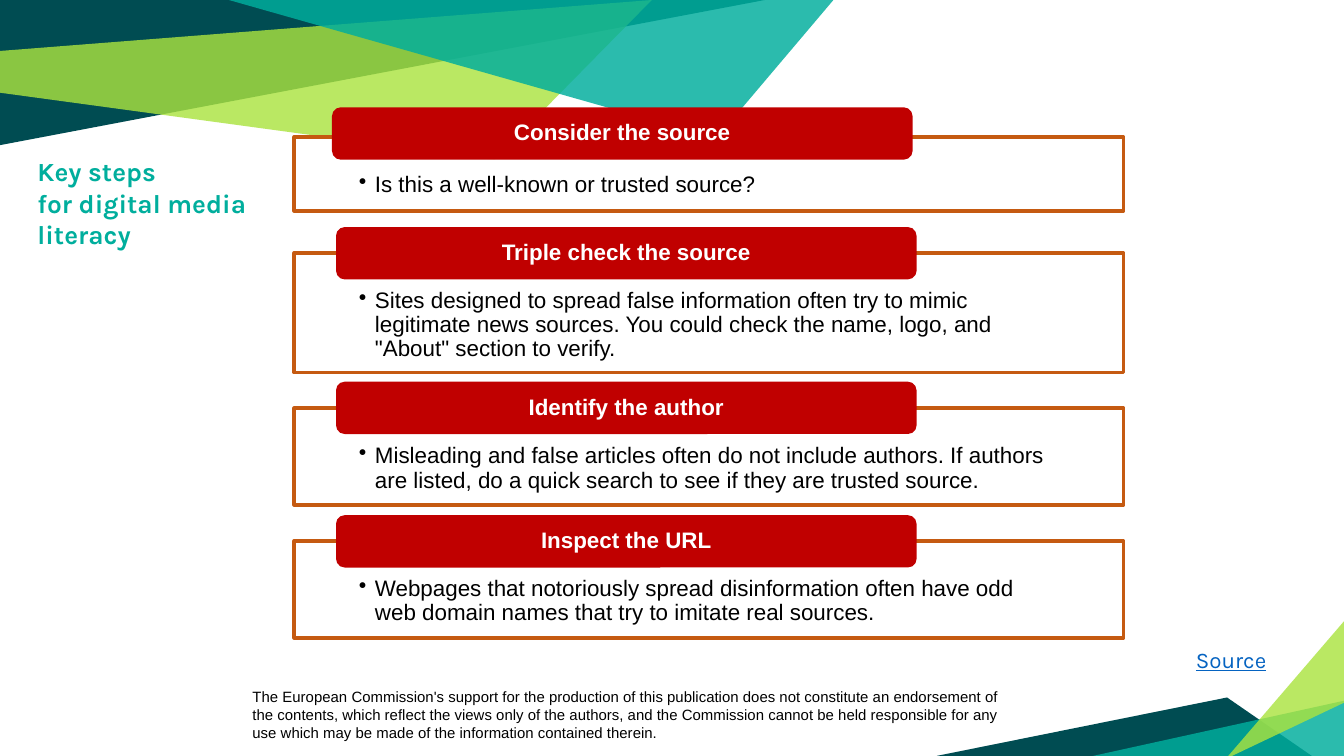
from lxml.etree import SubElement
from pptx import Presentation
from pptx.dml.color import RGBColor
from pptx.enum.shapes import MSO_SHAPE
from pptx.enum.text import MSO_ANCHOR, MSO_AUTO_SIZE, PP_ALIGN
from pptx.oxml.ns import qn
from pptx.util import Inches, Pt

WIDE, HIGH = Inches(10), Inches(5.625)
INK = {"dark": "004C52", "lime": "ABE33F", "teal": "00AE9D", "red": "C00000",
       "rust": "C55A11", "white": "FFFFFF", "black": "000000", "blue": "0563C1"}

NOTE = ("The European Commission's support for the production of this publication "
        "does not constitute an endorsement of the contents, which reflect the views "
        "only of the authors, and the Commission cannot be held responsible for any "
        "use which may be made of the information contained therein.")
TITLE = ["Key steps", "for digital media literacy"]

SHARDS = [
    ("dark", 100, [(0, 0), (0, 19.2), (56.9, 0)]),
    ("lime", 81, [(-0.1, 6.76), (0, 12.27), (36.8, 21.16), (48.5, 0)]),
    ("dark", 100, [(69.7, 100), (97.6, 100), (91.3, 92.27)]),
    ("teal", 83, [(100.2, 92.62), (100.2, 100.4), (80.3, 100.4)]),
    ("lime", 81, [(100.2, 92.8), (100.2, 81.78), (91.2, 100.4)]),
    ("teal", 83, [(17, 0), (53.3, 18.31), (62.1, -0.18), (60.9, 0)]),
]

STEPS = [
    ("Consider the source", "Is this a well-known or trusted source?",
     24.7, 14.2, 18.13, 9.78),
    ("Triple check the source",
     "Sites designed to spread false information often try to mimic legitimate news "
     "sources. You could check the name, logo, and \"About\" section to verify.",
     25, 30.04, 33.46, 15.82),
    ("Identify the author",
     "Misleading and false articles often do not include authors. If authors are "
     "listed, do a quick search to see if they are trusted source.",
     25, 50.49, 54.0, 12.8),
    ("Inspect the URL",
     "Webpages that notoriously spread disinformation often have odd web domain "
     "names that try to imitate real sources.",
     25, 68.15, 71.56, 12.8),
]
BODY_X, BODY_W = 21.9, 61.7
TAB_W, TAB_H = 43.2, 6.93

FONTS = {
    "note": ("black", {"name": "Arial", "size": Pt(8)}),
    "title": ("teal", {"name": "Karla", "size": Pt(14), "bold": True}),
    "link": ("blue", {"name": "Karla", "size": Pt(12), "underline": True}),
    "tab": ("white", {"name": "Arial", "size": Pt(12), "bold": True}),
    "body": ("black", {"name": "Arial", "size": Pt(12)}),
}
GROW = {"auto_size": MSO_AUTO_SIZE.SHAPE_TO_FIT_TEXT, "word_wrap": True}
FRAMES = {
    "note": GROW,
    "title": GROW,
    "link": {**GROW, "word_wrap": False},
    "tab": {"word_wrap": True, "vertical_anchor": MSO_ANCHOR.MIDDLE,
            "margin_left": Inches(0.18), "margin_right": Inches(0.18),
            "margin_top": 0, "margin_bottom": 0},
    "body": {"word_wrap": True, "vertical_anchor": MSO_ANCHOR.TOP,
             "margin_left": Inches(0.48), "margin_right": Inches(0.48),
             "margin_top": Inches(0.27), "margin_bottom": Inches(0.09)},
}
LEFT = {"alignment": PP_ALIGN.LEFT}
PARAS = {
    "tab": {"alignment": PP_ALIGN.CENTER, "line_spacing": 0.9},
    "body": {**LEFT, "line_spacing": 0.9},
}


def rgb(key):
    return RGBColor.from_string(INK[key])


def spot(x, y):
    return round(WIDE * x / 100), round(HIGH * y / 100)


def apply(item, values):
    for key, value in values.items():
        setattr(item, key, value)


def paint(shape, key, alpha=100, line=None):
    shape.shadow.inherit = False
    shape.fill.solid()
    shape.fill.fore_color.rgb = rgb(key)
    if alpha < 100:
        tint = shape.fill._xPr.find(".//" + qn("a:srgbClr"))
        SubElement(tint, qn("a:alpha"), val=str(alpha * 1000))
    if line:
        shape.line.color.rgb = rgb(line)
        shape.line.width = Pt(2)
    else:
        shape.line.fill.background()


def bullet(para):
    prop = para._p.get_or_add_pPr()
    prop.set("marL", str(Inches(0.12)))
    prop.set("indent", str(-Inches(0.12)))
    tint = SubElement(prop, qn("a:buClr"))
    SubElement(tint, qn("a:srgbClr"), val=INK["black"])
    SubElement(prop, qn("a:buChar"), char="•")


def write(shape, kind, lines):
    frame = shape.text_frame
    apply(frame, FRAMES[kind])
    ink, font = FONTS[kind]
    for i, line in enumerate(lines):
        para = frame.add_paragraph() if i else frame.paragraphs[0]
        if kind == "body":
            bullet(para)
        apply(para, PARAS.get(kind, LEFT))
        run = para.add_run()
        run.text = line
        apply(run.font, font)
        run.font.color.rgb = rgb(ink)


def label(shapes, kind, lines, x, y, w, h):
    write(shapes.add_textbox(*spot(x, y), *spot(w, h)), kind, lines)


def shard(shapes, key, alpha, points):
    first, *rest = [spot(*point) for point in points]
    pen = shapes.build_freeform(*first)
    pen.add_line_segments(rest, close=True)
    paint(pen.convert_to_shape(), key, alpha)


def step(shapes, head, text, tab_x, tab_y, top, tall):
    body = shapes.add_shape(MSO_SHAPE.RECTANGLE, *spot(BODY_X, top), *spot(BODY_W, tall))
    paint(body, "white", 90, "rust")
    write(body, "body", [text])
    tab = shapes.add_shape(MSO_SHAPE.ROUNDED_RECTANGLE,
                           *spot(tab_x, tab_y), *spot(TAB_W, TAB_H))
    paint(tab, "red")
    write(tab, "tab", [head])


def main():
    deck = Presentation()
    deck.slide_width, deck.slide_height = WIDE, HIGH
    shapes = deck.slides.add_slide(deck.slide_layouts[6]).shapes
    label(shapes, "note", [NOTE], 17.8, 90.13, 57.9, 8.89)
    for item in SHARDS:
        shard(shapes, *item)
    for item in STEPS:
        step(shapes, *item)
    label(shapes, "title", TITLE, 1.8, 19.73, 22.8, 18.49)
    label(shapes, "link", ["Source"], 88, 84.62, 7.3, 5.33)
    deck.save("out.pptx")


if __name__ == "__main__":
    main()
